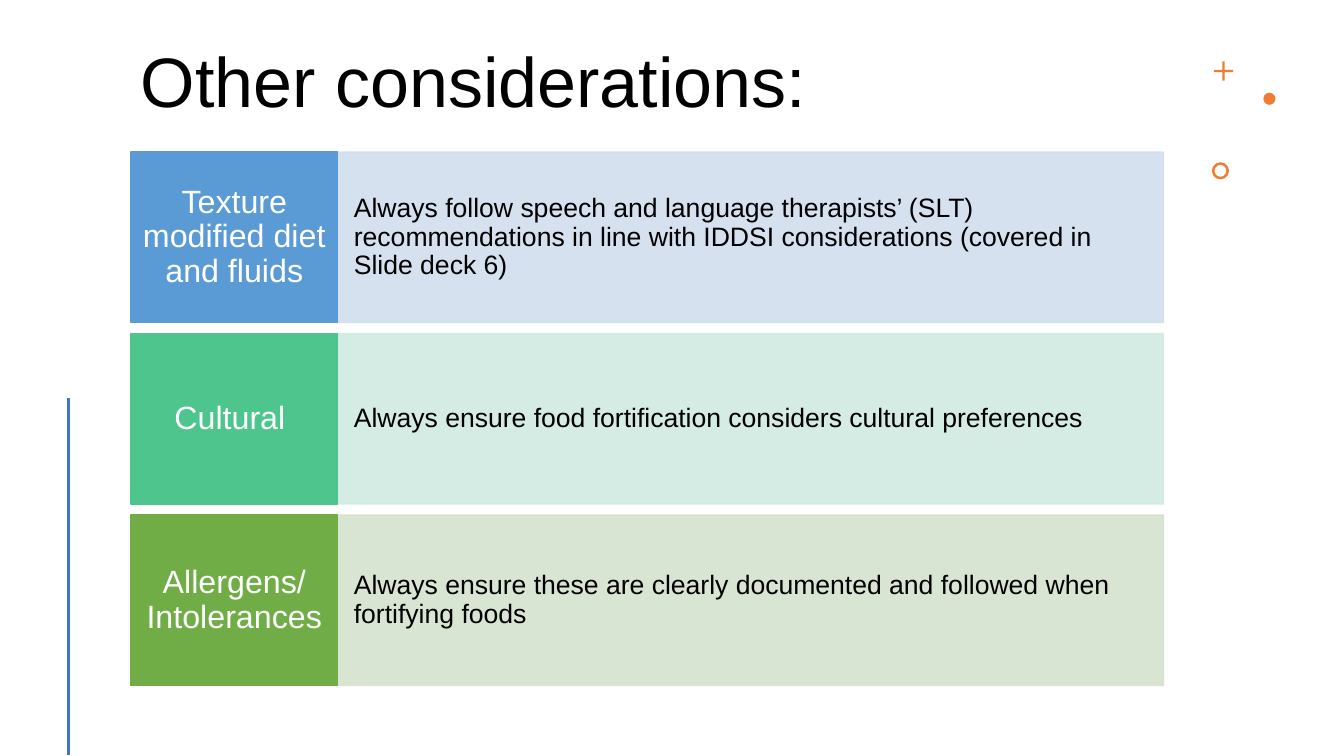
from lxml.etree import SubElement
from pptx import Presentation
from pptx.dml.color import RGBColor
from pptx.enum.shapes import MSO_CONNECTOR as Connector, MSO_SHAPE as Shape
from pptx.enum.text import MSO_ANCHOR as Anchor, PP_ALIGN as Align
from pptx.oxml.ns import qn
from pptx.util import Inches, Pt

FONT = "Arial"
BLACK, WHITE, ORANGE, BLUE = "000000", "FFFFFF", "ED7D31", "4472C4"
LEFT, LABEL_WIDTH, DETAIL_WIDTH = 1.3, 2.05, 8.19
FIRST_ROW, ROW_PITCH, ROW_HEIGHT = 1.51, 1.8, 1.69

TOPICS = [
    ("Texture modified diet and fluids", "5B9BD5",
     "Always follow speech and language therapists’ (SLT) recommendations "
     "in line with IDDSI considerations (covered in Slide deck 6)", "D2DEEF"),
    ("Cultural ", "4DC58D",
     "Always ensure food fortification considers cultural preferences", "D0EAE1"),
    ("Allergens/ Intolerances", "70AD47",
     "Always ensure these are clearly documented and followed when "
     "fortifying foods", "D5E3CF"),
]

ORNAMENTS = [
    (Shape.CROSS, 12.04, 0.61, 0.19, 0.44),
    (Shape.OVAL, 12.53, 0.92, 0.12, None),
    (Shape.DONUT, 12.02, 1.61, 0.17, 0.15),
]


def color(value):
    return RGBColor.from_string(value)


def set_opacity(fill_parent, percent):
    tint = fill_parent.find(qn("a:solidFill")).find(qn("a:srgbClr"))
    SubElement(tint, qn("a:alpha")).set("val", str(percent * 1000))


def write(box, text, size, ink, align=Align.LEFT, anchor=Anchor.MIDDLE,
          insets=(0.1, 0.05)):
    frame = box.text_frame
    frame.word_wrap = True
    frame.vertical_anchor = anchor
    frame.margin_left = frame.margin_right = Inches(insets[0])
    frame.margin_top = frame.margin_bottom = Inches(insets[1])
    para = frame.paragraphs[0]
    para.text = text
    para.alignment = align
    para.line_spacing = 0.9
    para.font.name = FONT
    para.font.size = Pt(size)
    para.font.color.rgb = color(ink)


def add_filled(page, kind, left, top, width, height, fill):
    shape = page.shapes.add_shape(
        kind, Inches(left), Inches(top), Inches(width), Inches(height))
    shape.shadow.inherit = False
    shape.fill.solid()
    shape.fill.fore_color.rgb = color(fill)
    shape.line.fill.background()
    return shape


def add_panel(page, left, top, width, fill, opacity=100):
    panel = add_filled(page, Shape.RECTANGLE, left, top, width, ROW_HEIGHT, fill)
    panel.line.color.rgb = color(fill)
    panel.line.width = Pt(1)
    if opacity < 100:
        properties = panel._element.spPr
        set_opacity(properties, opacity)
        set_opacity(properties.find(qn("a:ln")), opacity)
    return panel


def add_topic(page, row, label, label_fill, detail, detail_fill):
    top = FIRST_ROW + row * ROW_PITCH
    detail_panel = add_panel(
        page, LEFT + LABEL_WIDTH, top, DETAIL_WIDTH, detail_fill, 90)
    write(detail_panel, detail, 19, BLACK, insets=(0.16, 0.43))
    label_panel = add_panel(page, LEFT, top, LABEL_WIDTH, label_fill)
    write(label_panel, label, 23, WHITE, Align.CENTER, insets=(0.11, 0.17))


def add_title(page, text):
    box = page.shapes.add_textbox(
        Inches(LEFT), Inches(0.42), Inches(10.23), Inches(1.31))
    write(box, text, 50, BLACK, anchor=Anchor.TOP)


def add_ornament(page, kind, left, top, size, adjustment):
    ornament = add_filled(page, kind, left, top, size, size, ORANGE)
    if adjustment is not None:
        ornament.adjustments[0] = adjustment


def add_side_line(page):
    line = page.shapes.add_connector(
        Connector.STRAIGHT, Inches(0.68), Inches(3.95), Inches(0.68), Inches(7.49))
    line.line.color.rgb = color(BLUE)
    line.line.width = Pt(2)
    SubElement(line._element.spPr, qn("a:effectLst"))


def main():
    deck = Presentation()
    deck.slide_width, deck.slide_height = Inches(13.33), Inches(7.5)
    page = deck.slides.add_slide(deck.slide_layouts[6])
    add_title(page, "Other considerations:")
    for ornament in ORNAMENTS:
        add_ornament(page, *ornament)
    add_side_line(page)
    for row, topic in enumerate(TOPICS):
        add_topic(page, row, *topic)
    deck.save("out.pptx")


if __name__ == "__main__":
    main()
